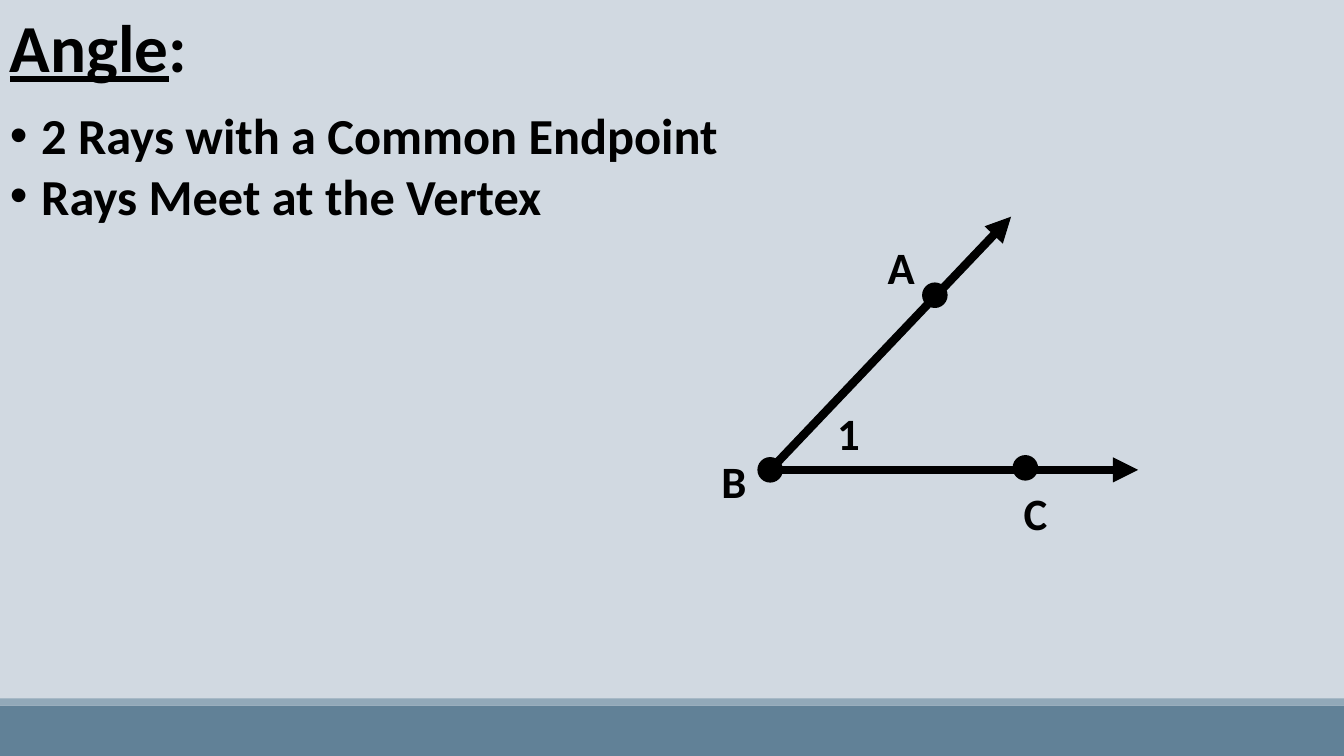
from dataclasses import dataclass

from lxml.etree import SubElement
from pptx import Presentation
from pptx.dml.color import RGBColor
from pptx.enum.shapes import MSO_CONNECTOR, MSO_SHAPE
from pptx.oxml.ns import qn
from pptx.util import Cm, Pt


@dataclass(frozen=True)
class Theme:
    background: RGBColor = RGBColor(0xD1, 0xD9, 0xE1)
    footer: RGBColor = RGBColor(0x61, 0x81, 0x97)
    footer_edge: RGBColor = RGBColor(0x92, 0xA9, 0xB9)
    ink: RGBColor = RGBColor(0, 0, 0)
    font: str = "Calibri"
    title: float = 48
    body: float = 36
    label: float = 32
    ray: float = 6
    dot_line: float = 1.25


@dataclass(frozen=True)
class Band:
    top: float
    height: float
    color: RGBColor


@dataclass(frozen=True)
class Spot:
    x: float
    y: float


@dataclass(frozen=True)
class Label:
    text: str
    left: float
    top: float


THEME = Theme()
WIDTH, HEIGHT = 33.87, 19.05
DOT = 0.6
BULLET_INDENT = 0.79
BANDS = [Band(17.78, 1.27, THEME.footer), Band(17.6, 0.18, THEME.footer_edge)]
VERTEX = Spot(19.41, 11.84)
RAY_ENDS = [Spot(25.48, 5.46), Spot(28.68, 11.84)]
POINTS = [Spot(25.84, 11.79), Spot(23.56, 7.44), VERTEX]
LABELS = [
    Label("B", 17.93, 11.3),
    Label("A", 22.12, 5.92),
    Label("C", 25.55, 12.12),
    Label("1", 20.85, 10.11),
]
BULLETS = ["2 Rays with a Common Endpoint", "Rays Meet at the Vertex"]


def add_band(s, band: Band) -> None:
    sp = s.shapes.add_shape(
        MSO_SHAPE.RECTANGLE, 0, Cm(band.top), Cm(WIDTH), Cm(band.height)
    )
    sp.shadow.inherit = False
    sp.fill.solid()
    sp.fill.fore_color.rgb = band.color
    sp.line.fill.background()


def add_ray(s, start: Spot, end: Spot) -> None:
    ray = s.shapes.add_connector(
        MSO_CONNECTOR.STRAIGHT, Cm(start.x), Cm(start.y), Cm(end.x), Cm(end.y)
    )
    ray.line.color.rgb = THEME.ink
    ray.line.width = Pt(THEME.ray)
    SubElement(ray.line._get_or_add_ln(), qn("a:tailEnd"), type="triangle")
    SubElement(ray._element.spPr, qn("a:effectLst"))


def add_dot(s, spot: Spot) -> None:
    sp = s.shapes.add_shape(
        MSO_SHAPE.OVAL, Cm(spot.x - DOT / 2), Cm(spot.y - DOT / 2), Cm(DOT), Cm(DOT)
    )
    sp.shadow.inherit = False
    sp.fill.solid()
    sp.fill.fore_color.rgb = THEME.ink
    sp.line.color.rgb = THEME.ink
    sp.line.width = Pt(THEME.dot_line)


def add_text_frame(s, left: float, top: float, width: float, height: float):
    tf = s.shapes.add_textbox(Cm(left), Cm(top), Cm(width), Cm(height)).text_frame
    tf.word_wrap = True
    return tf


def format_runs(p, size: float) -> None:
    for r in p.runs:
        r.font.name = THEME.font
        r.font.size = Pt(size)
        r.font.bold = True
        r.font.color.rgb = THEME.ink


def add_label(s, label: Label) -> None:
    tf = add_text_frame(s, label.left, label.top, 1.78, 1.63)
    tf.text = label.text
    format_runs(tf.paragraphs[0], THEME.label)


def add_bullet(p) -> None:
    pPr = p._p.get_or_add_pPr()
    pPr.set("marL", str(Cm(BULLET_INDENT)))
    pPr.set("indent", str(-Cm(BULLET_INDENT)))
    SubElement(pPr, qn("a:buFont"), typeface="Arial")
    SubElement(pPr, qn("a:buChar"), char="•")


def add_definition(s) -> None:
    tf = add_text_frame(s, 0, 0, 33.25, 7.39)
    tf.text = "Angle"
    title = tf.paragraphs[0]
    title.runs[0].font.underline = True
    title.add_run().text = ":"
    format_runs(title, THEME.title)
    for i, text in enumerate(BULLETS):
        p = tf.add_paragraph()
        p.text = text
        p.space_before = Pt(0 if i else 13.4)
        add_bullet(p)
        format_runs(p, THEME.body)


def main() -> None:
    prs = Presentation()
    prs.slide_width, prs.slide_height = Cm(WIDTH), Cm(HEIGHT)
    s = prs.slides.add_slide(prs.slide_layouts[6])
    s.background.fill.solid()
    s.background.fill.fore_color.rgb = THEME.background
    for band in BANDS:
        add_band(s, band)
    add_definition(s)
    for end in RAY_ENDS:
        add_ray(s, VERTEX, end)
    for spot in POINTS:
        add_dot(s, spot)
    for label in LABELS:
        add_label(s, label)
    prs.save("out.pptx")


if __name__ == "__main__":
    main()
